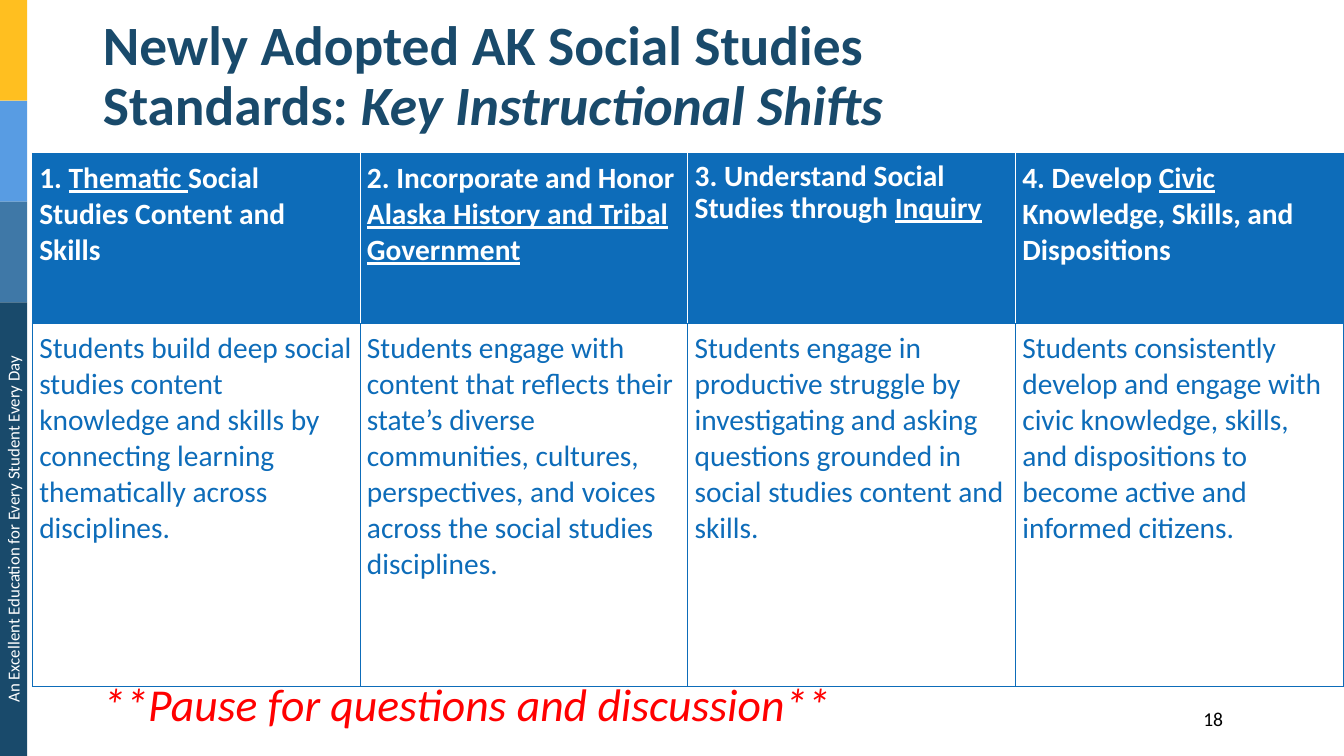
from lxml.etree import SubElement
from pptx import Presentation
from pptx.dml.color import RGBColor
from pptx.enum.shapes import MSO_SHAPE
from pptx.enum.text import MSO_ANCHOR, MSO_AUTO_SIZE, PP_ALIGN
from pptx.oxml.ns import qn
from pptx.util import Inches, Pt

NAVY = RGBColor(0x19, 0x4A, 0x6B)
STEEL = RGBColor(0x3F, 0x78, 0xA7)
SKY = RGBColor(0x58, 0x9C, 0xE3)
GOLD = RGBColor(0xFF, 0xBF, 0x20)
BLUE = RGBColor(0x0D, 0x6C, 0xB9)
WHITE = RGBColor(0xFF, 0xFF, 0xFF)
BLACK = RGBColor(0, 0, 0)
RED = RGBColor(0xFF, 0, 0)

LEFT = Inches(0.92)
BAR_W = Inches(0.27)
BAND = Inches(1)

# Each shift: header before, underlined and after; line spacing; description
SHIFTS = [
    ("1. ", "Thematic ", "Social Studies Content and Skills", 1.0,
     "Students build deep social studies content knowledge and skills by "
     "connecting learning thematically across disciplines."),
    ("2. Incorporate and Honor ", "Alaska History and Tribal Government", "", 1.0,
     "Students engage with content that reflects their state’s diverse communities, "
     "cultures, perspectives, and voices across the social studies disciplines."),
    ("3. Understand Social Studies through ", "Inquiry", "", 0.9,
     "Students engage in productive struggle by investigating and asking "
     "questions grounded in social studies content and skills."),
    ("4. Develop ", "Civic", " Knowledge, Skills, and Dispositions", 1.0,
     "Students consistently develop and engage with civic knowledge, skills, "
     "and dispositions to become active and informed citizens."),
]


def style(p, size, color, align=PP_ALIGN.LEFT, spacing=1.0, bold=False):
    p.alignment, p.line_spacing = align, spacing
    p.font.name, p.font.size, p.font.bold = "Calibri", Pt(size), bold
    p.font.color.rgb = color


def set_borders(cell, **colors):
    """Draw 0.75 pt cell borders, keyed by side: L, R, T, B."""
    tcPr = cell._tc.get_or_add_tcPr()
    for i, side in enumerate("LRTB"):
        ln = SubElement(tcPr, qn(f"a:ln{side}"), w=str(Pt(0.75)))
        tcPr.remove(ln)
        tcPr.insert(i, ln)
        fill = SubElement(ln, qn("a:solidFill"))
        SubElement(fill, qn("a:srgbClr"), val=str(colors.get(side, BLUE)))


prs = Presentation()
prs.slide_width, prs.slide_height = Inches(13.33), Inches(7.5)
s = prs.slides.add_slide(prs.slide_layouts[5])

# Side bar
for row, span, color in [(0, 1, GOLD), (1, 1, SKY), (2, 1, STEEL), (3, 4.5, NAVY)]:
    sp = s.shapes.add_shape(MSO_SHAPE.RECTANGLE, 0, row * BAND, BAR_W, int(span * BAND))
    sp.shadow.inherit = False
    sp.fill.solid()
    sp.fill.fore_color.rgb = color
    sp.line.fill.background()

# Title
title = s.shapes.title
title.left, title.top, title.width, title.height = LEFT, Inches(0.38), Inches(10.2), Inches(0.77)
tf = title.text_frame
tf.word_wrap, tf.auto_size = True, MSO_AUTO_SIZE.NONE
tf.vertical_anchor = MSO_ANCHOR.MIDDLE
p = tf.paragraphs[0]
p.add_run().text = "Newly Adopted AK Social Studies Standards: "
r = p.add_run()
r.text = "Key Instructional Shifts"
r.font.italic = True
style(p, 39.6, NAVY, spacing=0.9, bold=True)

# Table of shifts
col_w = Inches(3.25)
row_heights = [Inches(1.69), Inches(3.6)]
last = len(SHIFTS) - 1
table = s.shapes.add_table(2, len(SHIFTS), Inches(0.32), Inches(1.52),
                           col_w * len(SHIFTS), sum(row_heights)).table
table.horz_banding = False
for row, height in zip(table.rows, row_heights):
    row.height = height
for col, (before, key, after, spacing, description) in enumerate(SHIFTS):
    table.columns[col].width = col_w
    head, body = table.cell(0, col), table.cell(1, col)
    for cell, fill in [(head, BLUE), (body, WHITE)]:
        cell.fill.solid()
        cell.fill.fore_color.rgb = fill
        cell.margin_left = cell.margin_right = Inches(0.07)
        cell.margin_top = cell.margin_bottom = Inches(0.07)
    p = head.text_frame.paragraphs[0]
    for text in filter(None, (before, key, after)):
        r = p.add_run()
        r.text = text
        r.font.underline = text == key
    style(p, 21, WHITE, spacing=spacing, bold=True)
    set_borders(head, L=WHITE if col else BLUE, R=WHITE if col < last else BLUE)
    body.text = description
    style(body.text_frame.paragraphs[0], 21, BLUE)
    set_borders(body)

# Motto, closing prompt and page number
for text, box, size, color, align, spacing, italic, turn in [
    ("An Excellent Education for Every Student Every Day", (-2.12, 5.1, 4.5, 0.3),
     12, WHITE, PP_ALIGN.CENTER, 1.0, False, 270),
    ("**Pause for questions and discussion**", (0.92, 6.8, 11.82, 0.6),
     32.6, RED, PP_ALIGN.LEFT, 0.7, True, 0),
    ("18", (11.38, 6.96, 0.85, 0.34), 14, BLACK, PP_ALIGN.RIGHT, 1.0, False, 0),
]:
    sp = s.shapes.add_textbox(*map(Inches, box))
    sp.rotation = turn
    tf = sp.text_frame
    tf.word_wrap = True
    p = tf.paragraphs[0]
    p.text = text
    style(p, size, color, align, spacing)
    p.font.italic = italic

prs.save("out.pptx")
